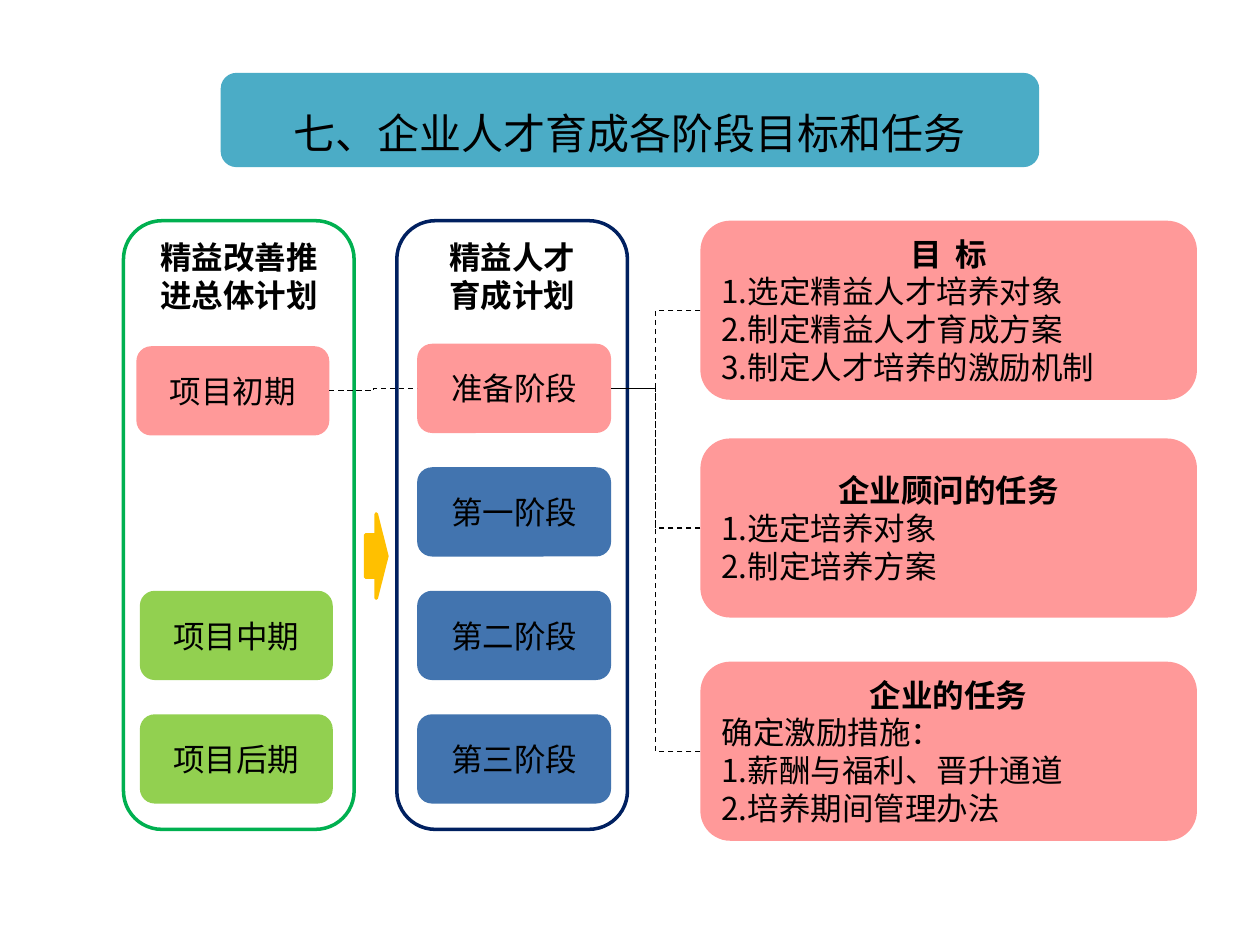
from dataclasses import dataclass
from lxml.etree import SubElement
from pptx import Presentation
from pptx.dml.color import RGBColor
from pptx.enum.dml import MSO_LINE
from pptx.enum.shapes import MSO_CONNECTOR, MSO_SHAPE
from pptx.enum.text import MSO_ANCHOR, PP_ALIGN
from pptx.oxml.ns import qn
from pptx.util import Cm, Pt


@dataclass(frozen=True)
class Theme:
    """Colours, fonts and type sizes of the slide."""
    ink: str = "000000"
    pink: str = "FF9999"
    teal: str = "4BACC6"
    blue: str = "4274AF"
    lime: str = "92D050"
    green: str = "00B050"
    navy: str = "002060"
    gold: str = "FFC000"
    font: str = "Calibri"
    asian: str = "Noto Sans CJK SC"
    body: int = 18
    title: int = 24
    thin: float = 0.75
    thick: float = 2


def write(frame, text, *, theme, size=None, font=None, bold=False,
          align=PP_ALIGN.CENTER, number=False, spacing=None):
    """Add one formatted paragraph to a text frame."""
    first = frame.paragraphs[0]
    para = frame.add_paragraph() if first.runs else first
    para.alignment = align
    if spacing:
        para.line_spacing = spacing
    if number:
        props = para._p.get_or_add_pPr()
        SubElement(props, qn("a:buFont"), typeface="+mj-lt")
        SubElement(props, qn("a:buAutoNum"), type="arabicPeriod")
    run = para.add_run()
    run.text = text
    run.font.size = Pt(size or theme.body)
    run.font.bold = bold
    run.font.color.rgb = RGBColor.from_string(theme.ink)
    run.font.name = font or theme.font
    SubElement(run._r.get_or_add_rPr(), qn("a:ea"), typeface=theme.asian)


class Deck:
    """Holds the theme and the current slide."""

    def __init__(self, theme, slide):
        """Keep the theme and slide for later drawing."""
        self.theme, self.slide = theme, slide

    def shape(self, x, y, w, h, fill=None, line=None, kind=MSO_SHAPE.ROUNDED_RECTANGLE):
        """Draw a preset shape with optional fill and outline."""
        item = self.slide.shapes.add_shape(kind, Cm(x), Cm(y), Cm(w), Cm(h))
        item.shadow.inherit = False
        if fill:
            item.fill.solid()
            item.fill.fore_color.rgb = RGBColor.from_string(fill)
        else:
            item.fill.background()
        if line:
            item.line.color.rgb = RGBColor.from_string(line)
            item.line.width = Pt(self.theme.thick)
        else:
            item.line.fill.background()
        item.text_frame.word_wrap = True
        return item

    def box(self, x, y, w, h, fill, text, **form):
        """Draw a filled box with one centred text."""
        item = self.shape(x, y, w, h, fill)
        item.text_frame.vertical_anchor = MSO_ANCHOR.MIDDLE
        write(item.text_frame, text, theme=self.theme, **form)
        return item

    def panel(self, x, line, heads, inset=0.25):
        """Draw an outlined column with its heading at the top."""
        item = self.shape(x, 4.45, 4.65, 12.27, line=line)
        frame = item.text_frame
        frame.vertical_anchor = MSO_ANCHOR.TOP
        frame.margin_left = frame.margin_right = Cm(inset)
        for head in heads:
            write(frame, head, theme=self.theme, bold=True)

    def card(self, y, head, steps, lead=None):
        """Draw a card with a heading, a lead line and numbered steps."""
        item = self.box(14.12, y, 10.01, 3.61, self.theme.pink, head, bold=True)
        if lead:
            write(item.text_frame, lead, theme=self.theme, align=PP_ALIGN.LEFT)
        for step in steps:
            write(item.text_frame, step, theme=self.theme,
                  align=PP_ALIGN.LEFT, number=True)
        return item

    def link(self, start, end, out, into):
        """Join two shapes with a dashed elbow line."""
        line = self.slide.shapes.add_connector(MSO_CONNECTOR.ELBOW, 0, 0, 0, 0)
        line.begin_connect(start, out)
        line.end_connect(end, into)
        line.line.color.rgb = RGBColor.from_string(self.theme.ink)
        line.line.width = Pt(self.theme.thin)
        line.line.dash_style = MSO_LINE.DASH
        SubElement(line._element.spPr, qn("a:effectLst"))


def main():
    """Build the slide and save it."""
    show = Presentation()
    show.slide_width, show.slide_height = Cm(25.4), Cm(19.05)
    theme = Theme()
    deck = Deck(theme, show.slides.add_slide(show.slide_layouts[6]))

    deck.box(4.45, 1.47, 16.5, 1.9, theme.teal, "七、企业人才育成各阶段目标和任务",
             size=theme.title, font=theme.asian, spacing=1.5)
    deck.panel(2.49, theme.green, ["精益改善推进总体计划"])
    deck.panel(8, theme.navy, ["精益人才", "育成计划"], inset=0.1)

    rows = [6.93 + 2.49 * i for i in range(4)]
    names = ["准备阶段", "第一阶段", "第二阶段", "第三阶段"]
    fills = [theme.pink] + [theme.blue] * 3
    stages = [deck.box(8.41, y, 3.91, 1.8, fill, name)
              for y, fill, name in zip(rows, fills, names)]

    early = deck.box(2.75, 6.98, 3.89, 1.8, theme.pink, "项目初期")
    for y, name in zip(rows[2:], ["项目中期", "项目后期"]):
        deck.box(2.82, y, 3.89, 1.8, theme.lime, name)
    deck.shape(7.37, 10.36, 0.43, 1.7, theme.gold, theme.gold, MSO_SHAPE.RIGHT_ARROW)

    cards = [
        deck.card(4.45, "目  标", ["选定精益人才培养对象", "制定精益人才育成方案",
                                  "制定人才培养的激励机制"]),
        deck.card(8.84, "企业顾问的任务", ["选定培养对象", "制定培养方案"]),
        deck.card(13.34, "企业的任务", ["薪酬与福利、晋升通道", "培养期间管理办法"],
                  lead="确定激励措施："),
    ]
    for card in cards:
        deck.link(card, stages[0], 1, 3)
    deck.link(early, stages[0], 3, 1)
    show.save("out.pptx")


if __name__ == "__main__":
    main()
